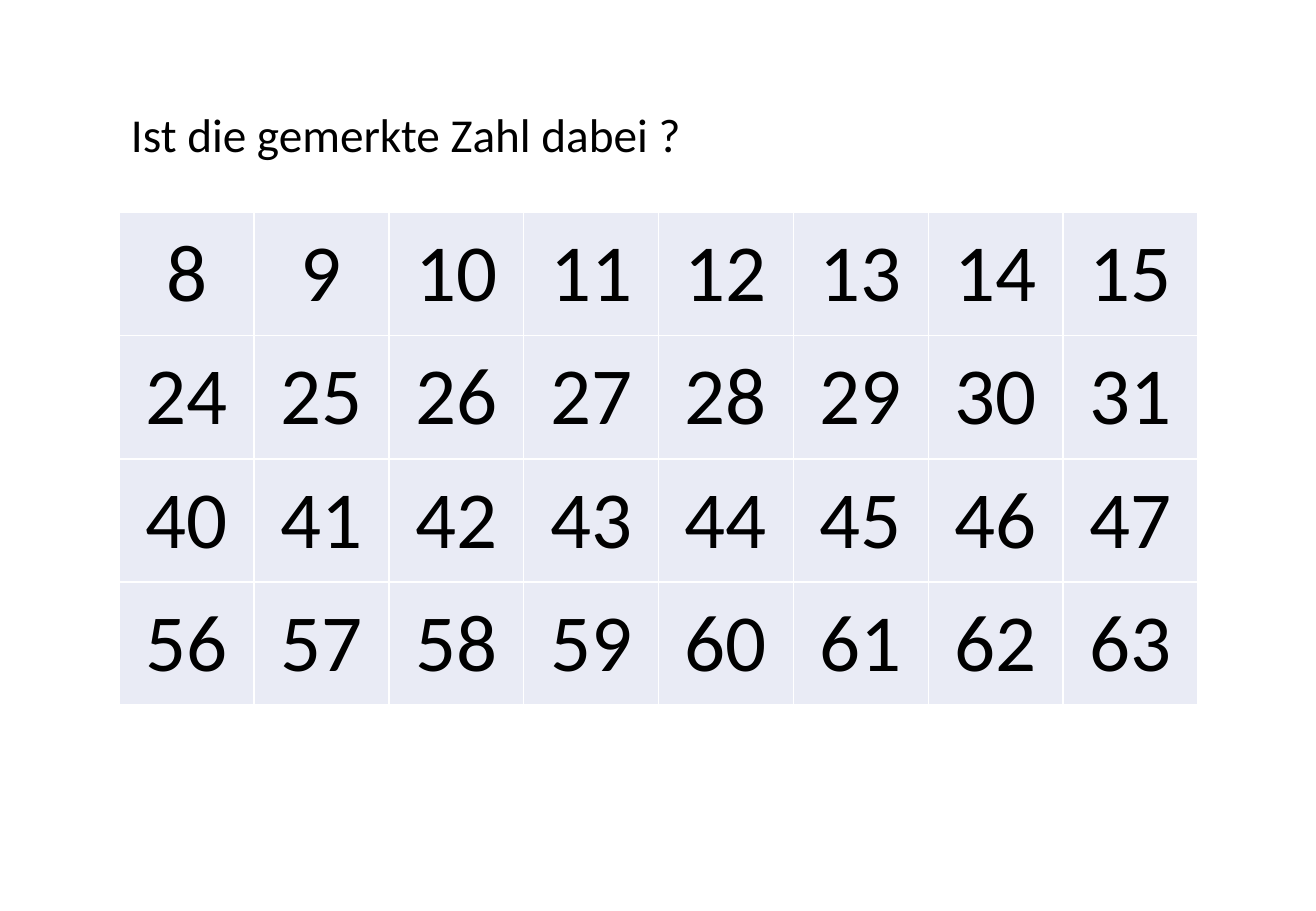
import dataclasses

import pptx
import pptx.dml.color
import pptx.enum.text
import pptx.oxml
import pptx.oxml.ns
import pptx.util

Inches = pptx.util.Inches
FONT = "Calibri"
BLACK, WHITE, CELL_FILL = "000000", "FFFFFF", "E9EBF5"


@dataclasses.dataclass(frozen=True)
class NumberRow:
    first: int
    count: int = 8

    def numbers(self) -> range:
        return range(self.first, self.first + self.count)


# Numbers below 64 whose binary digit for 8 is set
NUMBER_ROWS = [NumberRow(first) for first in range(8, 64, 16)]
COLUMN_WIDTH, ROW_HEIGHT = 1.11, 1.01


def color(value: str) -> pptx.dml.color.RGBColor:
    return pptx.dml.color.RGBColor.from_string(value)


def style_paragraph(paragraph, size: int) -> None:
    paragraph.font.name = FONT
    paragraph.font.size = pptx.util.Pt(size)
    paragraph.font.color.rgb = color(BLACK)


def set_borders(cell, value: str, points: float) -> None:
    properties = cell._tc.get_or_add_tcPr()
    for index, side in enumerate(("lnL", "lnR", "lnT", "lnB")):
        border = pptx.oxml.parse_xml(
            f'<a:{side} {pptx.oxml.ns.nsdecls("a")} w="{pptx.util.Pt(points)}">'
            f'<a:solidFill><a:srgbClr val="{value}"/></a:solidFill></a:{side}>'
        )
        properties.insert(index, border)


def draw_number(cell, number: int) -> None:
    cell.margin_left = cell.margin_right = Inches(0.04)
    cell.margin_top = cell.margin_bottom = Inches(0.1)
    cell.fill.solid()
    cell.fill.fore_color.rgb = color(CELL_FILL)
    set_borders(cell, WHITE, 1)
    cell.text = str(number)
    paragraph = cell.text_frame.paragraphs[0]
    paragraph.alignment = pptx.enum.text.PP_ALIGN.CENTER
    style_paragraph(paragraph, 48)


def draw_table(slide, rows: list[NumberRow]) -> None:
    column_count = rows[0].count
    table = slide.shapes.add_table(
        len(rows), column_count, Inches(0.98), Inches(1.75),
        Inches(COLUMN_WIDTH * column_count), Inches(ROW_HEIGHT * len(rows)),
    ).table
    table.first_row = False
    table.horz_banding = False
    for column in table.columns:
        column.width = Inches(COLUMN_WIDTH)
    for row_index, row in enumerate(rows):
        table.rows[row_index].height = Inches(ROW_HEIGHT)
        for column_index, number in enumerate(row.numbers()):
            draw_number(table.cell(row_index, column_index), number)


def draw_question(slide, text: str) -> None:
    shape = slide.shapes.add_textbox(
        Inches(0.98), Inches(0.82), Inches(4.77), Inches(0.57))
    frame = shape.text_frame
    frame.word_wrap = False
    frame.auto_size = pptx.enum.text.MSO_AUTO_SIZE.SHAPE_TO_FIT_TEXT
    frame.text = text
    style_paragraph(frame.paragraphs[0], 28)


def main() -> None:
    presentation = pptx.Presentation()
    presentation.slide_width = Inches(10.83)
    presentation.slide_height = Inches(7.5)
    slide = presentation.slides.add_slide(presentation.slide_layouts[6])

    # Number card and its question
    draw_table(slide, NUMBER_ROWS)
    draw_question(slide, "Ist die gemerkte Zahl dabei ?")
    presentation.save("out.pptx")


if __name__ == "__main__":
    main()
